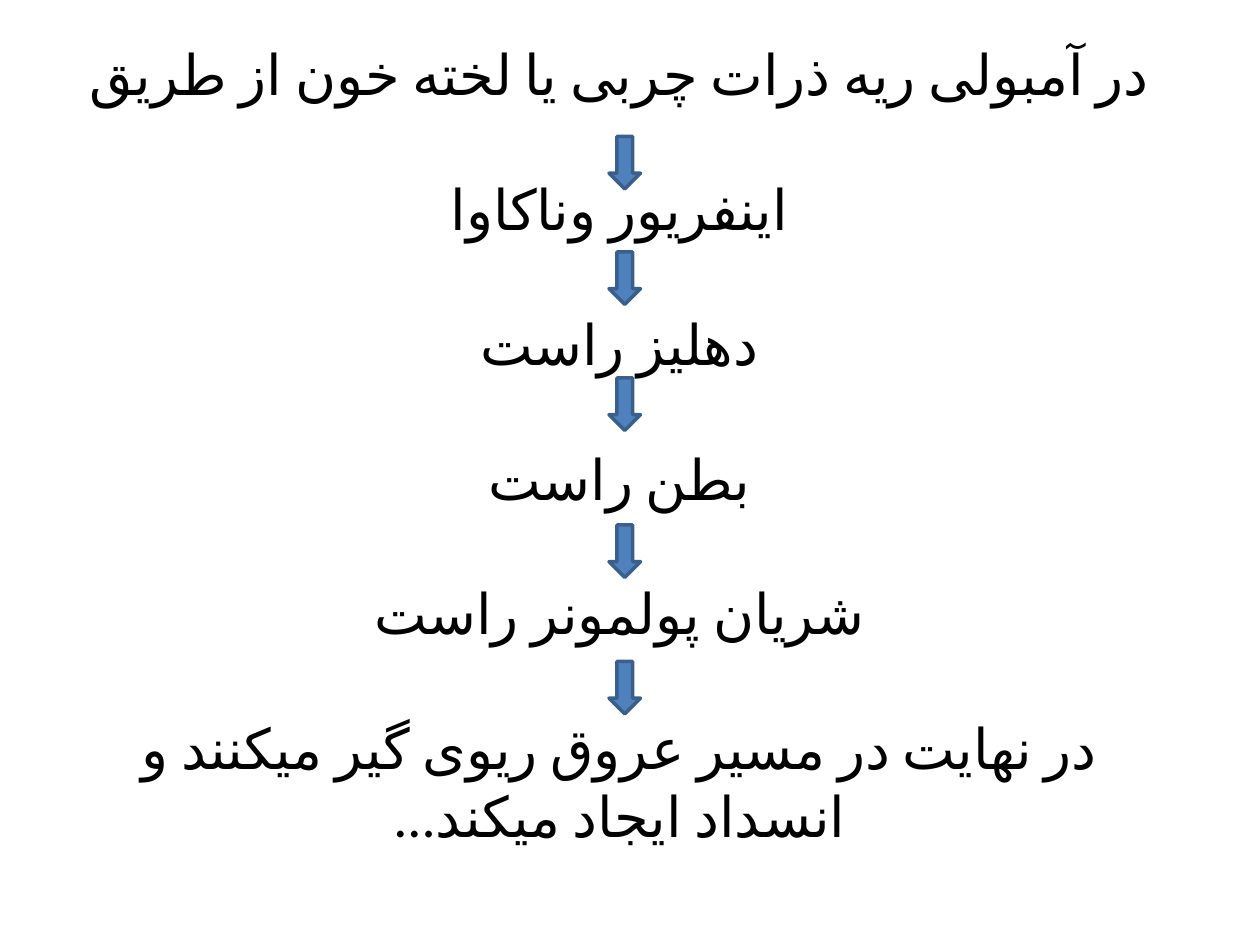
"""Build a slide on the path of a pulmonary embolus as a vertical flow."""
from lxml import etree
from pptx import Presentation
from pptx.dml.color import RGBColor as Rgb
from pptx.enum import shapes, text
from pptx.oxml import ns
from pptx.util import Pt

STEPS = [
    "در آمبولی ریه ذرات چربی یا لخته خون از طریق",
    "اینفریور وناکاوا",
    "دهلیز راست",
    "بطن راست",
    "شریان پولمونر راست",
    "در نهایت در مسیر عروق ریوی گیر میکنند و انسداد ایجاد میکند...",
]
TOPS = [78, 144, 216, 300, 378]
THEME = {"font": "Calibri", "size": 32, "pitch": 38.5, "ink": Rgb(0, 0, 0),
         "fill": Rgb(0x4F, 0x81, 0xBD), "line": Rgb(0x3A, 0x5F, 0x8C)}
PAGE = (720, 540)
BOX = (30, 228, 648, 90)
ARROW = (348, 18, 30)


def put(item, vals):
    """Set each named value on the item."""
    for key, val in vals.items():
        setattr(item, key, val)


def place(item, box):
    """Move and size the item in points."""
    put(item, dict(zip(("left", "top", "width", "height"), map(Pt, box))))


def style(run):
    """Give a run its font, for Latin and Persian letters alike."""
    put(run.font, {"name": THEME["font"], "size": Pt(THEME["size"])})
    run.font.color.rgb = THEME["ink"]
    props = run._r.get_or_add_rPr()
    props.set("lang", "fa-IR")
    etree.SubElement(props, ns.qn("a:cs")).set("typeface", THEME["font"])


def add_steps(slide):
    """Write the steps into the title, one paragraph each."""
    title = slide.shapes.title
    place(title, BOX)
    frame = title.text_frame
    pitch = Pt(THEME["pitch"])
    put(frame, {"text": "\n".join(STEPS), "word_wrap": True,
                "auto_size": text.MSO_AUTO_SIZE.NONE,
                "vertical_anchor": text.MSO_ANCHOR.MIDDLE,
                "margin_bottom": Pt(3.6) + pitch})
    for i, para in enumerate(frame.paragraphs):
        put(para, {"alignment": text.PP_ALIGN.CENTER, "line_spacing": pitch,
                   "space_before": pitch if i else Pt(0)})
        para._p.get_or_add_pPr().set("rtl", "1")
        for run in para.runs:
            style(run)


def add_arrow(slide, top):
    """Draw one down arrow between two steps."""
    left, wide, high = ARROW
    arrow = slide.shapes.add_shape(
        shapes.MSO_SHAPE.DOWN_ARROW, *map(Pt, (left, top, wide, high)))
    arrow.shadow.inherit = False
    arrow.fill.solid()
    arrow.fill.fore_color.rgb = THEME["fill"]
    arrow.line.color.rgb = THEME["line"]
    arrow.line.width = Pt(2)


def main():
    """Build and save the deck."""
    deck = Presentation()
    put(deck, dict(zip(("slide_width", "slide_height"), map(Pt, PAGE))))
    slide = deck.slides.add_slide(deck.slide_layouts[5])
    add_steps(slide)
    for top in TOPS:
        add_arrow(slide, top)
    deck.save("out.pptx")


if __name__ == "__main__":
    main()
